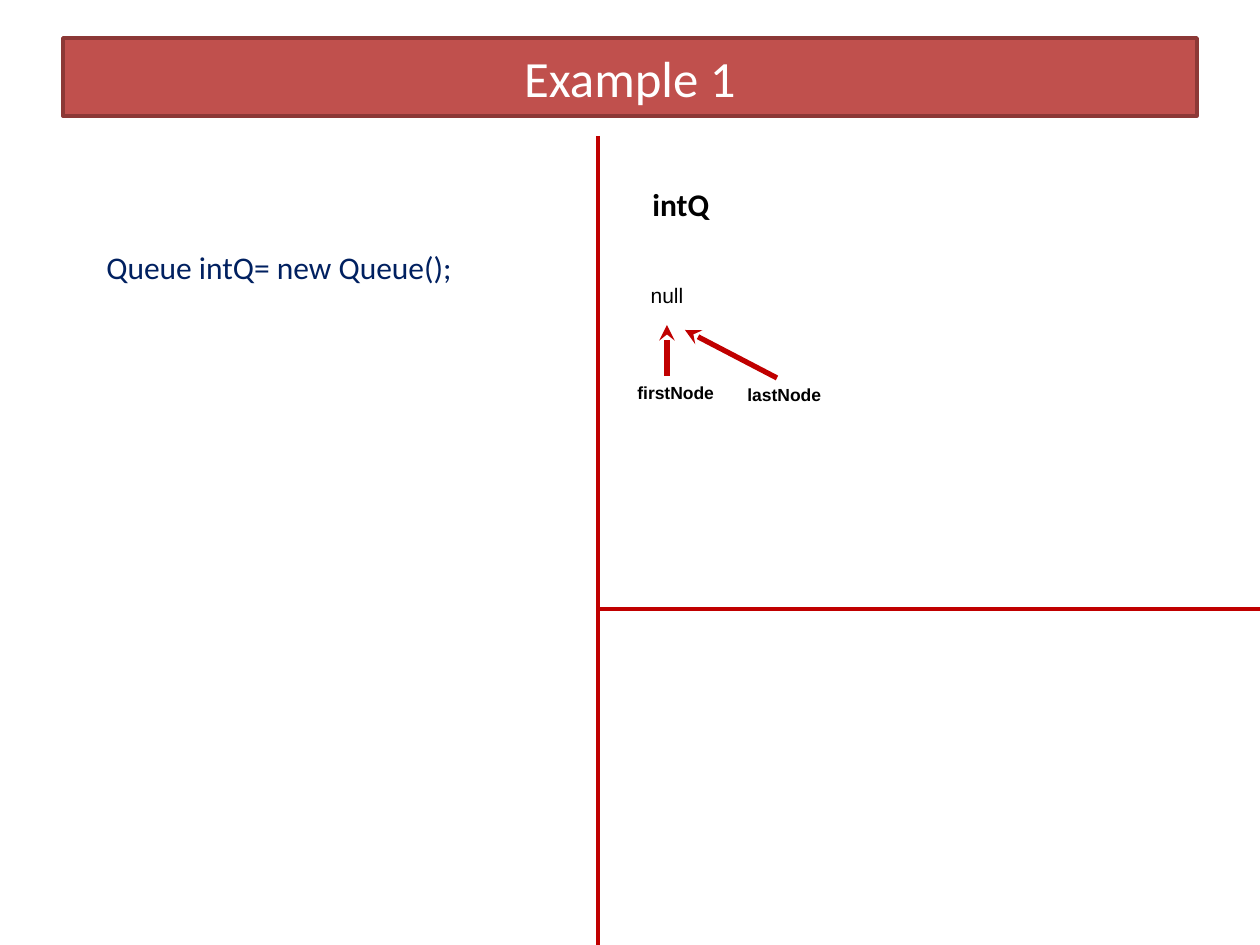
from pptx import Presentation
from pptx.dml.color import RGBColor
from pptx.enum.shapes import MSO_CONNECTOR
from pptx.enum.text import MSO_ANCHOR, MSO_AUTO_SIZE, PP_ALIGN
from pptx.oxml.ns import qn
from pptx.util import Emu, Pt
from lxml.etree import SubElement

PX = 914400 // 126  # EMU in one px

BLACK = RGBColor(0x00, 0x00, 0x00)
WHITE = RGBColor(0xFF, 0xFF, 0xFF)
NAVY = RGBColor(0x00, 0x20, 0x60)
RED = RGBColor(0xC0, 0x00, 0x00)
BANNER = RGBColor(0xC0, 0x50, 0x4D)
BANNER_EDGE = RGBColor(0x8C, 0x38, 0x36)

TITLE = "Example 1"
TITLE_BOX = (63, 38, 1134, 78)

# text, box, font, size, bold, colour, alignment
LABELS = [
    ("intQ", (640, 179, 83, 50), "Calibri", 18, True, BLACK, PP_ALIGN.LEFT),
    ("Queue intQ= new Queue();", (94, 242, 376, 50), "Calibri", 18, False, NAVY, PP_ALIGN.LEFT),
    ("null", (625, 276, 84, 38), "Arial", 12, False, BLACK, PP_ALIGN.CENTER),
]
DIVIDERS = [((598, 136), (598, 945)), ((598, 609), (1260, 609))]

# name, top left of the name, arrow tip; the arrow starts at the top of the name
POINTERS = [
    ("firstNode", (625, 376), (667, 325)),
    ("lastNode", (735, 378), (685, 330)),
]
POINTER_SIZE = (120, 34)
ARROW_INSET = 42


def px(*values):
    return [Emu(value * PX) for value in values]


def write(frame, text, font, size, bold, color, align):
    paragraph = frame.paragraphs[0]
    paragraph.alignment = align
    run = paragraph.add_run()
    run.text = text
    run.font.name = font
    run.font.size = Pt(size)
    run.font.bold = bold
    run.font.color.rgb = color


def add_label(shapes, text, box, *style):
    frame = shapes.add_textbox(*px(*box)).text_frame
    frame.word_wrap = True
    frame.auto_size = MSO_AUTO_SIZE.SHAPE_TO_FIT_TEXT
    write(frame, text, *style)


def add_line(shapes, start, end, width, arrow=False):
    line = shapes.add_connector(MSO_CONNECTOR.STRAIGHT, *px(*start, *end))
    line.line.color.rgb = RED
    line.line.width = Pt(width)
    if arrow:
        SubElement(line.line._get_or_add_ln(), qn("a:tailEnd"), type="stealth")
    SubElement(line._element.spPr, qn("a:effectLst"))


def add_title(slide):
    title = slide.shapes.title
    title.left, title.top, title.width, title.height = px(*TITLE_BOX)
    title.fill.solid()
    title.fill.fore_color.rgb = BANNER
    title.line.color.rgb = BANNER_EDGE
    title.line.width = Pt(2)
    frame = title.text_frame
    frame.auto_size = MSO_AUTO_SIZE.NONE
    frame.vertical_anchor = MSO_ANCHOR.MIDDLE
    write(frame, TITLE, "Calibri", 29, False, WHITE, PP_ALIGN.CENTER)


def main():
    presentation = Presentation()
    presentation.slide_width, presentation.slide_height = px(1260, 945)
    slide = presentation.slides.add_slide(presentation.slide_layouts[5])
    add_title(slide)
    for start, end in DIVIDERS:
        add_line(slide.shapes, start, end, 2.25)
    for label in LABELS:
        add_label(slide.shapes, *label)
    for name, (left, top), tip in POINTERS:
        group = slide.shapes.add_group_shape()
        add_label(group.shapes, name, (left, top, *POINTER_SIZE),
                  "Arial", 10, True, BLACK, PP_ALIGN.LEFT)
        add_line(group.shapes, (left + ARROW_INSET, top), tip, 3, arrow=True)
    presentation.save("out.pptx")


if __name__ == "__main__":
    main()
